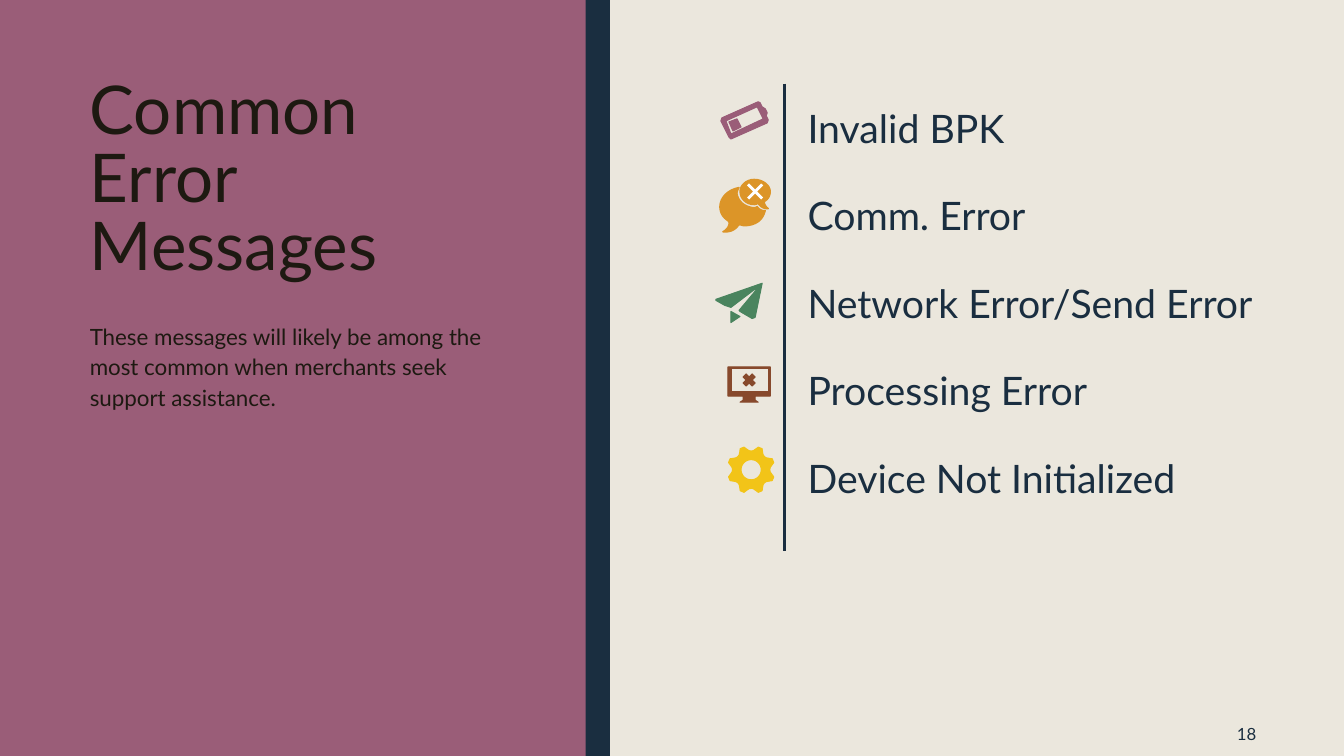
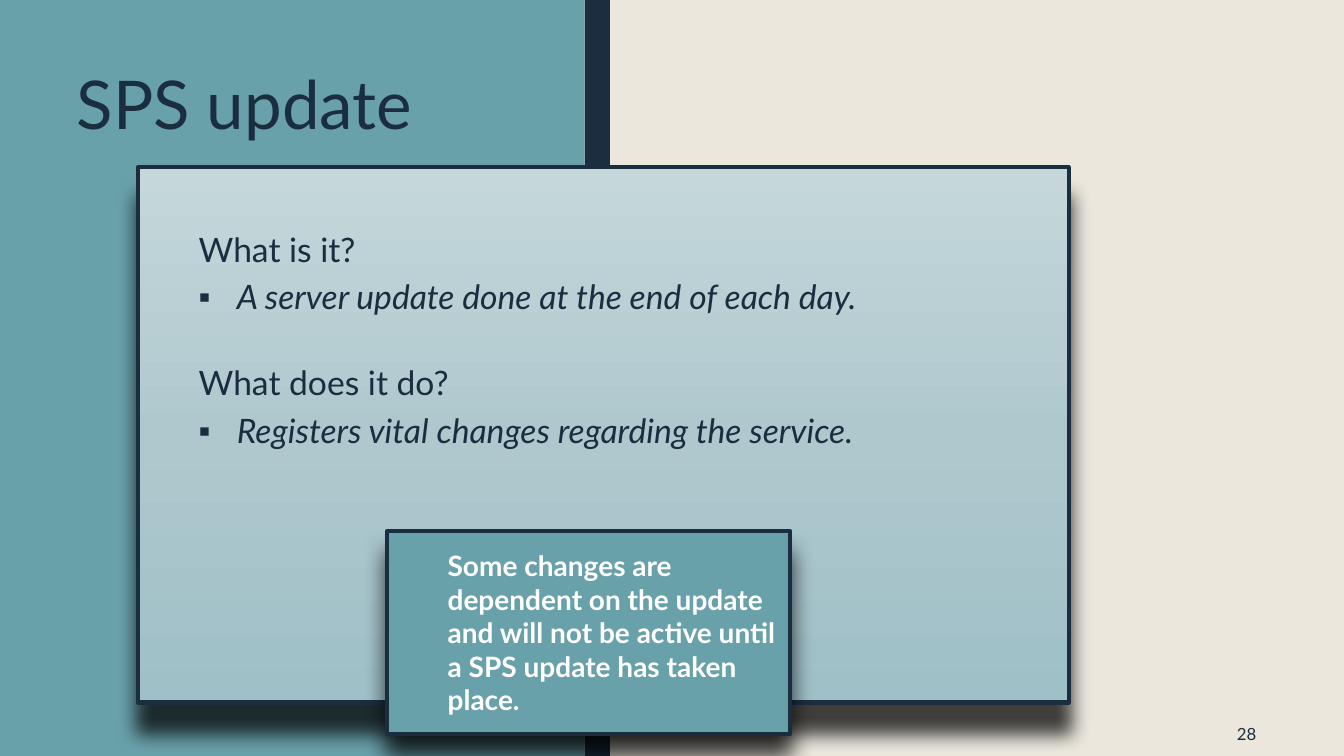
from copy import deepcopy
from dataclasses import dataclass
from math import cos, radians, sin

from lxml.etree import SubElement
from pptx import Presentation
from pptx.dml.color import RGBColor
from pptx.enum.shapes import MSO_CONNECTOR as Link, MSO_SHAPE as Preset
from pptx.enum.text import MSO_ANCHOR as Anchor, MSO_AUTO_SIZE as Fit, PP_ALIGN as Align
from pptx.oxml.ns import qn
from pptx.util import Inches, Pt

Step = tuple[float, ...]
Path = list[Step]
Box = tuple[float, float, float, float]


@dataclass(frozen=True)
class Theme:
    font: str = "Lato"
    cream: str = "EBE7DD"
    teal: str = "69A1AB"
    navy: str = "1A2E40"
    plum: str = "9A5D78"
    ink: str = "1D1911"
    white: str = "FFFFFF"
    amber: str = "DC9528"
    green: str = "4A845E"
    rust: str = "87492C"
    gold: str = "F2C418"
    fade: tuple[str, ...] = ("C5D7DB", "AFC8CE", "9FC0C7")
    title: int = 48
    list: int = 28
    item: int = 24
    note: int = 20
    lead: int = 16
    foot: int = 12


@dataclass(frozen=True)
class Style:
    size: float
    color: str
    lines: float | None = None
    before: float = 0
    after: float = 0
    bold: bool = False
    slant: bool = False
    left: float = 0
    hang: float = 0
    mark: str = ""
    align: Align = Align.LEFT


@dataclass(frozen=True)
class Icon:
    """Closed paths; a step is a point (2 numbers) or a cubic curve (6)."""
    color: str
    paths: list[Path]
    edge: float = 0.75


@dataclass(frozen=True)
class Shade:
    alpha: int
    blur: float
    drop: float


T = Theme()
TITLE = Style(T.title, T.ink, 0.84)
LEAD = Style(T.lead, T.ink, 1.13, after=15)
ERROR = Style(T.list, T.navy, 1.5, 10, 2)
ASK = Style(T.item, T.navy, 0.94, 5, 2, left=0.5)
NEXT = Style(T.item, T.navy, 0.94, 32, 2, left=0.5)
REPLY = Style(T.item, T.navy, 0.94, 5, 2, slant=True, left=0.88, hang=-0.38, mark="▪")
NOTE = Style(T.note, T.white, bold=True)
FOOT = Style(T.foot, T.navy, align=Align.RIGHT)


def rgb(code: str) -> RGBColor:
    return RGBColor.from_string(code)


def place(shape, box: Box) -> None:
    shape.left, shape.top, shape.width, shape.height = map(Inches, box)


def write(shape, rows: list[tuple[str, Style]], anchor: Anchor = Anchor.TOP) -> None:
    frame = shape.text_frame
    frame.word_wrap, frame.auto_size = True, Fit.NONE
    frame.vertical_anchor = anchor
    for i, (text, style) in enumerate(rows):
        para = frame.add_paragraph() if i else frame.paragraphs[0]
        para.alignment = style.align
        if style.lines:
            para.line_spacing = style.lines
        para.space_before, para.space_after = Pt(style.before), Pt(style.after)
        props = para._p.get_or_add_pPr()
        props.set("marL", str(Inches(style.left)))
        props.set("indent", str(Inches(style.hang)))
        if style.mark:
            SubElement(props, qn("a:buChar")).set("char", style.mark)
        else:
            SubElement(props, qn("a:buNone"))
        run = para.add_run()
        run.text = text
        font = run.font
        font.name, font.size = T.font, Pt(style.size)
        font.bold, font.italic = style.bold, style.slant
        font.color.rgb = rgb(style.color)


def fill(shape, color: str) -> None:
    shape.shadow.inherit = False
    shape.fill.solid()
    shape.fill.fore_color.rgb = rgb(color)


def edge(shape, color: str, width: float) -> None:
    if width:
        shape.line.color.rgb = rgb(color)
        shape.line.width = Pt(width)
    else:
        shape.line.fill.background()


def rect(slide, box: Box, color: str):
    shape = slide.shapes.add_shape(Preset.RECTANGLE, *map(Inches, box))
    fill(shape, color)
    edge(shape, color, 0)
    return shape


def blend(shape, codes: tuple[str, ...]) -> None:
    """Fill from top to bottom with evenly spaced colours."""
    shape.fill.gradient()
    shape.fill.gradient_angle = 270
    stops = shape.element.find(".//" + qn("a:gsLst"))
    while len(stops) < len(codes):
        stops.append(deepcopy(stops[-1]))
    for i, (stop, code) in enumerate(zip(shape.fill.gradient_stops, codes)):
        stop.color.rgb = rgb(code)
        stop.position = i / (len(codes) - 1)


def shade(shape, look: Shade) -> None:
    shape.shadow.inherit = False
    cast = SubElement(shape.element.spPr.find(qn("a:effectLst")), qn("a:outerShdw"),
                      blurRad=str(Pt(look.blur)), dist=str(Pt(look.drop)),
                      dir="5400000", algn="t", rotWithShape="0")
    color = SubElement(cast, qn("a:srgbClr"), val="000000")
    SubElement(color, qn("a:alpha"), val=str(look.alpha * 1000))


def trace(path: Path) -> list[tuple[int, int]]:
    """Turn curves into short straight steps, in EMU."""
    points: Path = []
    for step in path:
        if len(step) == 2:
            points.append(step)
            continue
        x, y = points[-1]
        ax, ay, bx, by, cx, cy = step
        for i in range(1, 9):
            t = i / 8
            u = 1 - t
            k = (u ** 3, 3 * u * u * t, 3 * u * t * t, t ** 3)
            points.append((k[0] * x + k[1] * ax + k[2] * bx + k[3] * cx,
                           k[0] * y + k[1] * ay + k[2] * by + k[3] * cy))
    return [(Inches(x), Inches(y)) for x, y in points]


def draw(slide, icon: Icon) -> None:
    first, *rest = map(trace, icon.paths)
    pen = slide.shapes.build_freeform(*first[0])
    pen.add_line_segments(first[1:], close=True)
    for path in rest:
        pen.move_to(*path[0])
        pen.add_line_segments(path[1:], close=True)
    shape = pen.convert_to_shape()
    fill(shape, icon.color)
    edge(shape, icon.color, icon.edge)


def block(x: float, y: float, right: float, base: float) -> Path:
    return [(x, y), (right, y), (right, base), (x, base)]


def cross(x: float, y: float, reach: float, half: float) -> Path:
    arm = [(reach, reach - half), (reach - half, reach), (0, half)]
    path: Path = []
    for _ in range(4):
        path += [(x + dx, y + dy) for dx, dy in arm]
        arm = [(-dy, dx) for dx, dy in arm]
    return path


def polar(x: float, y: float, spots: list[tuple[float, float]]) -> Path:
    return [(x + r * cos(radians(a)), y + r * sin(radians(a))) for a, r in spots]


def gear(x: float, y: float) -> list[Path]:
    tooth = [(-16, 0.19), (-10, 0.21), (-5, 0.235), (5, 0.235),
             (10, 0.21), (16, 0.19), (22.5, 0.185)]
    rim = [(22.5 + 45 * k + a, r) for k in range(8) for a, r in tooth]
    return [polar(x, y, rim), polar(x, y, [(a, 0.1) for a in range(0, 360, 10)])]


BATTERY = Icon(T.plum, [
    [(7.62, 1.19), (7.61, 1.22), (7.25, 1.38), (7.23, 1.36), (7.15, 1.2), (7.16, 1.17),
     (7.52, 1.01), (7.54, 1.02), (7.56, 1.06), (7.59, 1.08), (7.61, 1.12), (7.6, 1.15)],
    [(7.55, 1.14), (7.51, 1.06), (7.2, 1.2), (7.25, 1.33), (7.57, 1.18)],
    [(7.35, 1.26), (7.27, 1.3), (7.23, 1.21), (7.31, 1.18)]])
CHAT = Icon(T.amber, [
    [(7.58, 2), (7.58, 2, 7.58, 2.04, 7.62, 2.07), (7.62, 2.07, 7.56, 2.08, 7.52, 2.02),
     (7.51, 2.02, 7.5, 2.03, 7.48, 2.03), (7.4, 2.03, 7.34, 1.97, 7.34, 1.9),
     (7.34, 1.84, 7.4, 1.78, 7.48, 1.78), (7.57, 1.78, 7.64, 1.84, 7.64, 1.9),
     (7.64, 1.94, 7.62, 1.98, 7.58, 2)],
    [(7.31, 1.92), (7.32, 1.99, 7.38, 2.05, 7.47, 2.06), (7.48, 2.06, 7.5, 2.06, 7.51, 2.05),
     (7.54, 2.09, 7.57, 2.09, 7.59, 2.09), (7.57, 2.18, 7.5, 2.24, 7.38, 2.24),
     (7.37, 2.24, 7.35, 2.23, 7.33, 2.23), (7.27, 2.32, 7.17, 2.3, 7.17, 2.3),
     (7.24, 2.26, 7.24, 2.2, 7.22, 2.19), (7.17, 2.16, 7.14, 2.11, 7.14, 2.05),
     (7.14, 1.96, 7.22, 1.88, 7.33, 1.86), (7.32, 1.88, 7.31, 1.9, 7.31, 1.92)]], 1)
FAULT = Icon(T.white, [cross(7.49, 1.9, 0.08, 0.02)], 0)
SCREEN = Icon(T.rust, [
    [(7.22, 3.64), (7.64, 3.64), (7.64, 3.93), (7.49, 3.93), (7.49, 3.97), (7.52, 3.99),
     (7.34, 3.99), (7.37, 3.97), (7.37, 3.93), (7.22, 3.93)],
    block(7.25, 3.66, 7.62, 3.88), cross(7.43, 3.77, 0.06, 0.03)])
PLANE = Icon(T.green, [
    [(7.56, 2.81), (7.1, 2.97), (7.1, 2.98), (7.19, 3.03), (7.25, 3.05), (7.54, 2.83),
     (7.33, 3.08), (7.34, 3.09), (7.46, 3.16), (7.49, 3.15)],
    [(7.25, 3.09), (7.25, 3.2), (7.34, 3.14)]])
COG = Icon(T.gold, gear(7.45, 4.66))


def dress(deck) -> None:
    """Give the master its background and its two bands."""
    master = deck.slide_master
    master.background.fill.solid()
    master.background.fill.fore_color.rgb = rgb(T.cream)
    bands = [((0, 0, 5.8, 7.5), T.teal), ((5.8, 0, 0.25, 7.5), T.navy)]
    for i, (box, color) in enumerate(bands):
        band = rect(deck.slides[0], box, color).element
        band.nvSpPr.cNvPr.set("id", str(100 + i))
        master.shapes.element.insert(2 + i, band)


def start(deck, layout: int, title: str, box: Box, style: Style, page: int):
    slide = deck.slides.add_slide(deck.slide_layouts[layout])
    place(slide.shapes.title, box)
    write(slide.shapes.title, [(title, style)])
    foot = slide.shapes.add_textbox(*map(Inches, (10.81, 7.06, 1.75, 0.44)))
    write(foot, [(str(page), FOOT)], Anchor.MIDDLE)
    return slide


def errors(deck) -> None:
    slide = start(deck, 3, "Common Error Messages", (0.79, 0.75, 4.22, 2.36), TITLE, 18)
    cover = rect(slide, (0, 0, 5.81, 7.5), T.plum).element
    cover.getparent().insert(2, cover)
    names, lead = slide.placeholders[1], slide.placeholders[2]
    place(names, (7.91, 0.75, 4.63, 5.66))
    write(names, [(name, ERROR) for name in (
        "Invalid BPK", "Comm. Error", "Network Error/Send Error",
        "Processing Error", "Device Not Initialized")])
    place(lead, (0.79, 3.12, 4.22, 3.29))
    write(lead, [("These messages will likely be among the most common "
                  "when merchants seek support assistance.", LEAD)])
    rule = slide.shapes.add_connector(
        Link.STRAIGHT, *map(Inches, (7.78, 0.83, 7.78, 5.47)))
    edge(rule, T.navy, 2.25)
    SubElement(rule.element.spPr, qn("a:effectLst"))
    for icon in (BATTERY, CHAT, FAULT, PLANE, SCREEN, COG):
        draw(slide, icon)


def update(deck) -> None:
    style = Style(T.title, T.navy, 0.84)
    slide = start(deck, 1, "SPS update", (0.66, 0.7, 4.22, 2.36), style, 28)
    panel = slide.placeholders[1]
    place(panel, (1.37, 1.66, 9.23, 5.31))
    blend(panel, T.fade)
    edge(panel, T.navy, 3)
    shade(panel, Shade(73, 13, 21))
    write(panel, [
        ("What is it?", ASK),
        ("A server update done at the end of each day.", REPLY),
        ("What does it do?", NEXT),
        ("Registers vital changes regarding the service.", REPLY)])
    panel.text_frame.margin_top = Inches(0.64)
    note = rect(slide, (3.84, 5.27, 4, 2.01), T.teal)
    edge(note, T.navy, 2.75)
    shade(note, Shade(72, 16, 15))
    write(note, [("Some changes are dependent on the update and will not be active "
                  "until a SPS update has taken place.", NOTE)], Anchor.MIDDLE)
    note.text_frame.margin_left = Inches(0.6)


def main() -> None:
    deck = Presentation()
    deck.slide_width, deck.slide_height = Inches(13.33), Inches(7.5)
    errors(deck)
    update(deck)
    dress(deck)
    deck.save("out.pptx")


if __name__ == "__main__":
    main()
